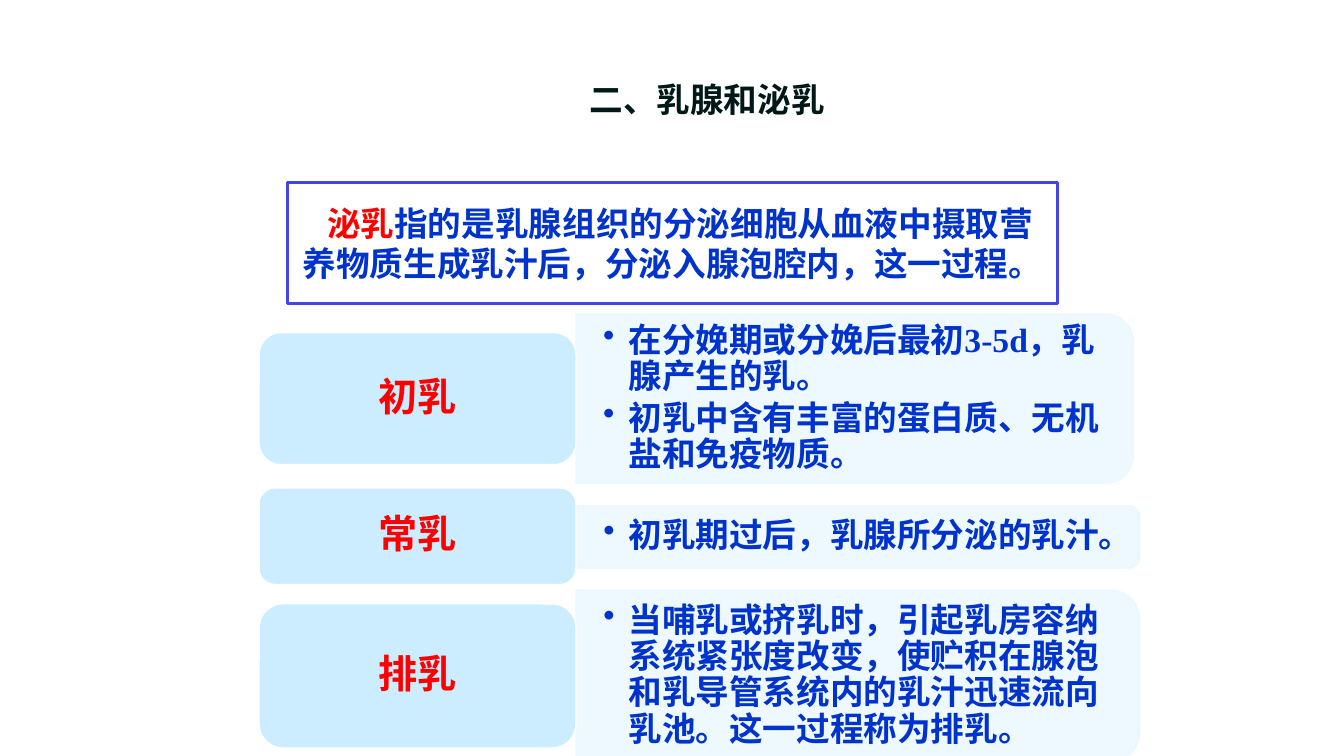
from lxml.etree import SubElement as Sub
from pptx import Presentation
from pptx.dml.color import RGBColor
from pptx.enum.shapes import MSO_SHAPE as Shape
from pptx.enum.text import MSO_ANCHOR as Anchor, PP_ALIGN as Align
from pptx.oxml.ns import qn
from pptx.util import Inches, Pt

SANS, SERIF = "Noto Sans CJK SC", "Times New Roman"
RED, BLUE, DARK = "FF0000", "0033CC", "001817"
FRAME, LABEL, PANEL, WHITE = "4545E5", "CCECFF", "ECF8FF", "FFFFFF"


def rgb(value):
    return RGBColor.from_string(value)


class Deck:
    """Slide style and drawing methods, with lengths in percent of the slide size."""

    def __init__(self):
        self.prs = Presentation()
        self.prs.slide_width, self.prs.slide_height = Inches(13.333), Inches(7.5)
        self.s = self.prs.slides.add_slide(self.prs.slide_layouts[6])

    def box(self, x, y, w, h):
        sw, sh = self.prs.slide_width, self.prs.slide_height
        return [int(v) for v in (x * sw / 100, y * sh / 100, w * sw / 100, h * sh / 100)]

    def shape(self, kind, box, fill, line, width=1):
        sp = self.s.shapes.add_shape(kind, *box)
        sp.shadow.inherit = False
        if fill:
            sp.fill.solid()
            sp.fill.fore_color.rgb = rgb(fill)
        else:
            sp.fill.background()
        sp.line.color.rgb = rgb(line)
        sp.line.width = Pt(width)
        return sp

    def frame(self, sp, dx=0.1, dy=0.05, anchor=Anchor.MIDDLE):
        tf = sp.text_frame
        tf.word_wrap = True
        tf.vertical_anchor = anchor
        tf.margin_left = tf.margin_right = Inches(dx)
        tf.margin_top = tf.margin_bottom = Inches(dy)
        return tf

    def style(self, p, size, font, color, align=Align.LEFT):
        p.alignment = align
        p.font.size, p.font.name, p.font.bold = Pt(size), font, True
        p.font.color.rgb = rgb(color)

    def title(self, text, *box):
        tf = self.frame(self.s.shapes.add_textbox(*self.box(*box)), anchor=Anchor.TOP)
        p = tf.paragraphs[0]
        p.text = text
        self.style(p, 24, SANS, DARK)

    def definition(self, term, text, *box):
        tf = self.frame(self.shape(Shape.RECTANGLE, self.box(*box), None, FRAME, 2.25))
        p = tf.paragraphs[0]
        p._p.get_or_add_pPr().set("indent", str(Inches(0.15)))
        for words, color in ((term, RED), (text, BLUE)):
            r = p.add_run()
            r.text = words
            r.font.color.rgb = rgb(color)
        self.style(p, 24, SANS, BLUE, Align.CENTER)

    def label(self, text, *box):
        sp = self.shape(Shape.ROUNDED_RECTANGLE, self.box(*box), LABEL, WHITE)
        p = self.frame(sp, 0.18, 0.12).paragraphs[0]
        p.text = text
        p.line_spacing = 0.9
        self.style(p, 28, SERIF, RED, Align.CENTER)

    def panel(self, x, y, w, h):
        left, top, width, height = self.box(x, y, w, h)
        turned = left + (width - height) // 2, top + (height - width) // 2, height, width
        sp = self.shape(Shape.ROUND_2_SAME_RECTANGLE, turned, PANEL, PANEL)
        sp.rotation = 90
        for color in sp._element.spPr.iter(qn("a:srgbClr")):
            Sub(color, qn("a:alpha"), val="90000")

    def bullets(self, items, *box):
        tf = self.frame(self.s.shapes.add_textbox(*self.box(*box)), 0.27, 0.14)
        for i, text in enumerate(items):
            p = tf.add_paragraph() if i else tf.paragraphs[0]
            p.text = text
            p.level = 1
            p.line_spacing, p.space_after = 0.9, Pt(3.6)
            pPr = p._p.get_or_add_pPr()
            pPr.set("marL", str(Inches(0.25)))
            pPr.set("indent", str(Inches(-0.25)))
            Sub(pPr, qn("a:buChar"), char="•")
            self.style(p, 24, SERIF, BLUE)


ROWS = [
    ("初乳", (44, 17.47), (41.53, 41.48, 22.4),
     ["在分娩期或分娩后最初3-5d，乳腺产生的乳。", "初乳中含有丰富的蛋白质、无机盐和免疫物质。"]),
    ("常乳", (64.53, 12.8), (66.87, 41.93, 8.27),
     ["初乳期过后，乳腺所分泌的乳汁。"]),
    ("排乳", (79.87, 19.07), (78.07, 41.93, 22.67),
     ["当哺乳或挤乳时，引起乳房容纳系统紧张度改变，使贮积在腺泡和乳导管系统内的乳汁"
      "迅速流向乳池。这一过程称为排乳。"]),
]
LABEL_X, LABEL_W, PANEL_X = 19.28, 23.58, 42.86


def main():
    deck = Deck()
    deck.title("二、乳腺和泌乳", 43.13, 9.73, 25.95, 6.67)
    deck.definition("泌乳", "指的是乳腺组织的分泌细胞从血液中摄取营养物质生成乳汁后，分泌入腺泡腔内，这一过程。",
                    21.38, 24.13, 57.3, 16)
    for name, (label_y, label_h), (y, w, h), items in ROWS:
        deck.panel(PANEL_X, y, w, h)
        deck.bullets(items, PANEL_X, y + 0.05 * h, w - 0.5, 0.9 * h)
        deck.label(name, LABEL_X, label_y, LABEL_W, label_h)
    deck.prs.save("out.pptx")


if __name__ == "__main__":
    main()
